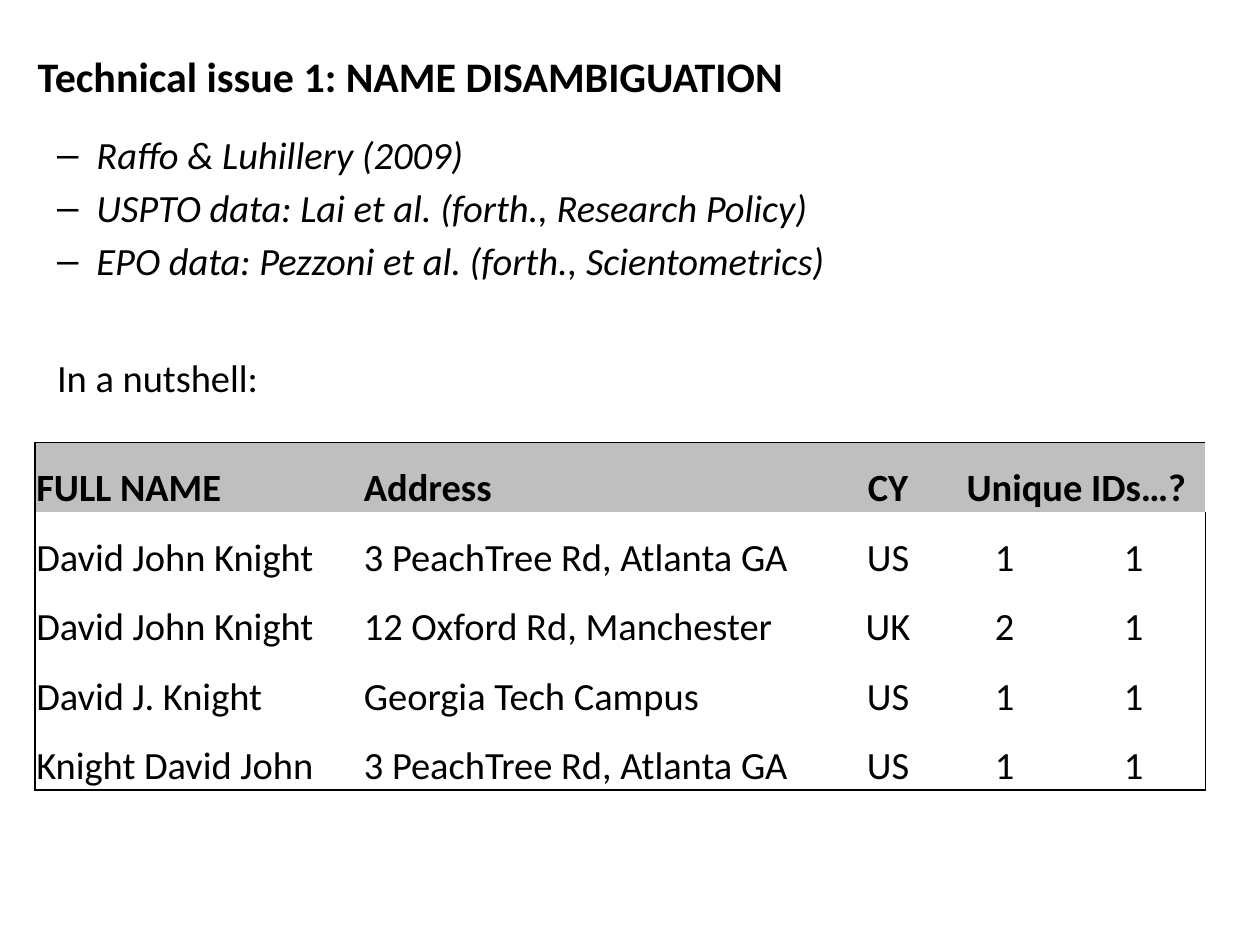
from lxml.etree import SubElement
from pptx import Presentation
from pptx.dml.color import RGBColor
from pptx.enum.text import MSO_ANCHOR, PP_ALIGN
from pptx.oxml.ns import qn
from pptx.util import Pt

BLACK = RGBColor(0x00, 0x00, 0x00)
GREY = RGBColor(0xBF, 0xBF, 0xBF)


class Deck:
    font = "Calibri"
    size = 22

    def __init__(self, wide, high):
        self.prs = Presentation()
        self.prs.slide_width, self.prs.slide_height = Pt(wide), Pt(high)
        self.slide = self.prs.slides.add_slide(self.prs.slide_layouts[6])

    def run(self, para, text, size=None, bold=False, italic=False):
        run = para.add_run()
        run.text = text
        font = run.font
        font.name, font.size = self.font, Pt(size or self.size)
        font.bold, font.italic = bold, italic
        font.color.rgb = BLACK

    def box(self, left, top, wide, high, anchor=MSO_ANCHOR.TOP):
        shape = self.slide.shapes.add_textbox(Pt(left), Pt(top), Pt(wide), Pt(high))
        frame = shape.text_frame
        frame.word_wrap = True
        frame.vertical_anchor = anchor
        return frame

    def dash(self, para, indent):
        props = para._p.get_or_add_pPr()
        props.set("marL", str(Pt(indent)))
        props.set("indent", str(-Pt(indent)))
        SubElement(props, qn("a:buFont"), typeface="Arial")
        SubElement(props, qn("a:buChar"), char="–")

    def edges(self, cell, drawn):
        props = cell._tc.get_or_add_tcPr()
        for side in "LRTB":
            line = SubElement(props, qn("a:ln" + side), w=str(Pt(1)))
            if side in drawn:
                fill = SubElement(line, qn("a:solidFill"))
                SubElement(fill, qn("a:srgbClr"), val=str(BLACK))
            else:
                SubElement(line, qn("a:noFill"))

    def cell(self, cell, text, head, centre):
        cell.margin_left = cell.margin_right = cell.margin_top = Pt(0.75)
        cell.margin_bottom = Pt(0)
        cell.vertical_anchor = MSO_ANCHOR.BOTTOM
        if head:
            cell.fill.solid()
            cell.fill.fore_color.rgb = GREY
        else:
            cell.fill.background()
        para = cell.text_frame.paragraphs[0]
        para.space_before = para.space_after = Pt(6)
        para.alignment = PP_ALIGN.CENTER if centre else PP_ALIGN.LEFT
        if text:
            self.run(para, text, bold=head)

    def table(self, left, top, widths, pitch, rows):
        shape = self.slide.shapes.add_table(
            len(rows), len(widths), Pt(left), Pt(top),
            Pt(sum(widths)), Pt(pitch * len(rows)))
        table = shape.table
        table.horz_banding = table.first_row = False
        for col, width in zip(table.columns, widths):
            col.width = Pt(width)
        last_row, last_col = len(rows) - 1, len(widths) - 1
        for r, row in enumerate(rows):
            table.rows[r].height = Pt(pitch)
            for c, text in enumerate(row):
                cell = table.cell(r, c)
                sides = {"L": c == 0, "R": c == last_col,
                         "T": r == 0, "B": r == last_row}
                self.edges(cell, [side for side in sides if sides[side]])
                self.cell(cell, text, head=r == 0, centre=c > 1)
        return table


def main():
    deck = Deck(720, 540)

    # Title
    title = deck.box(14.4, 26, 663, 34, MSO_ANCHOR.MIDDLE)
    deck.run(title.paragraphs[0], "Technical issue 1: NAME DISAMBIGUATION",
             size=24, bold=True)

    # References and lead-in
    body = deck.box(25.5, 71.3, 669, 430)
    papers = ["Raffo & Luhillery (2009)",
              "USPTO data: Lai et al. (forth., Research Policy)",
              "EPO data: Pezzoni et al. (forth., Scientometrics)"]
    for i, paper in enumerate(papers):
        para = body.paragraphs[0] if i == 0 else body.add_paragraph()
        para.space_before = Pt(4 if i else 0)
        deck.dash(para, 22.5)
        deck.run(para, paper, italic=True)
    lead = body.add_paragraph()
    lead.space_before = Pt(40.5)
    deck.run(lead, "In a nutshell:")

    # Inventor table
    rows = [
        ["FULL NAME", "Address", "CY", "Unique IDs…?", ""],
        ["David John Knight", "3 PeachTree Rd, Atlanta GA", "US", "1", "1"],
        ["David John Knight", "12 Oxford Rd, Manchester", "UK", "2", "1"],
        ["David J. Knight", "Georgia Tech Campus", "US", "1", "1"],
        ["Knight David John", "3 PeachTree Rd, Atlanta GA", "US", "1", "1"],
    ]
    table = deck.table(20, 252.8, [187.2, 266.4, 67.7, 65.5, 82.1], 39.75, rows)
    table.cell(0, 3).merge(table.cell(0, 4))
    deck.edges_done = None
    deck.prs.save("out.pptx")


if __name__ == "__main__":
    main()
